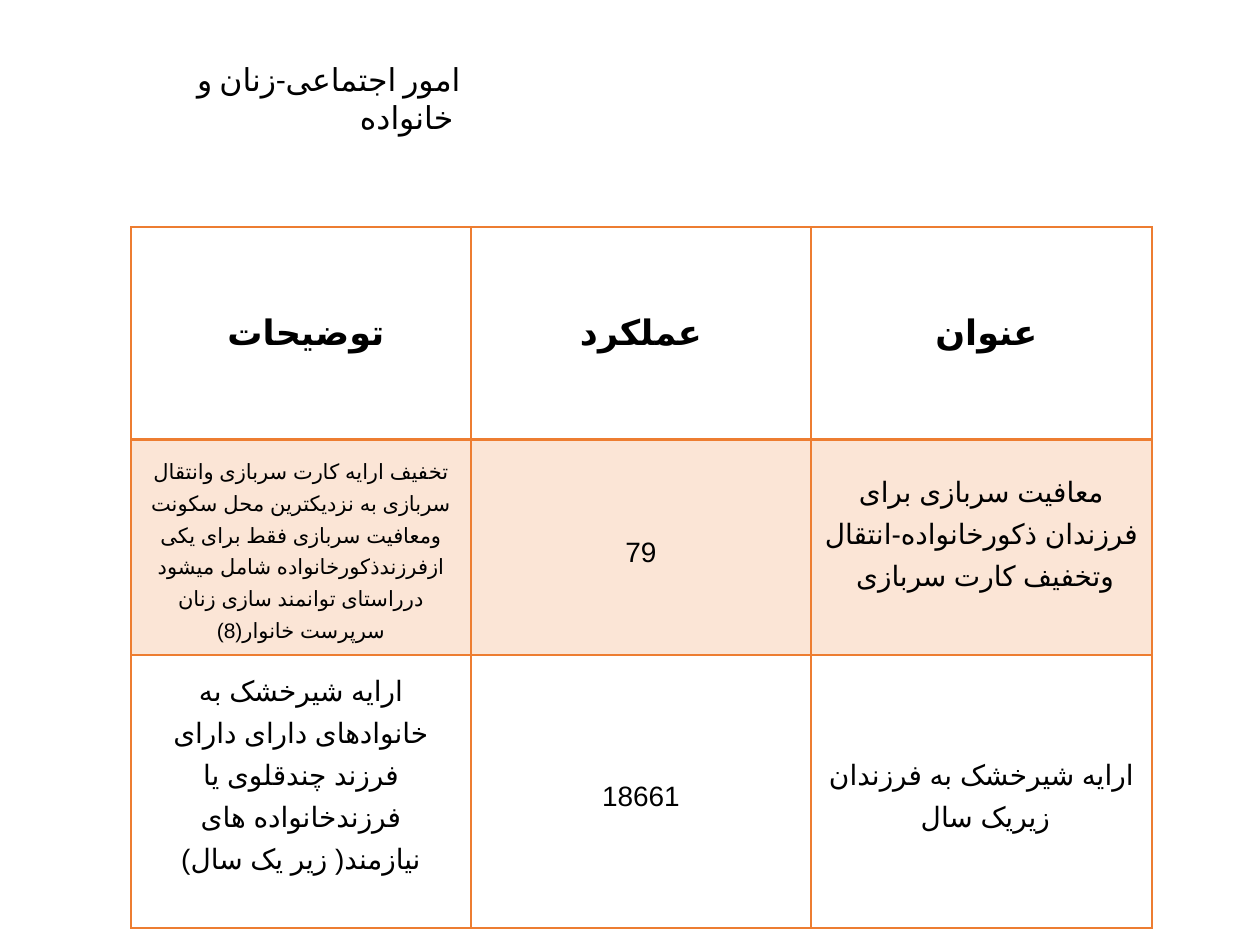
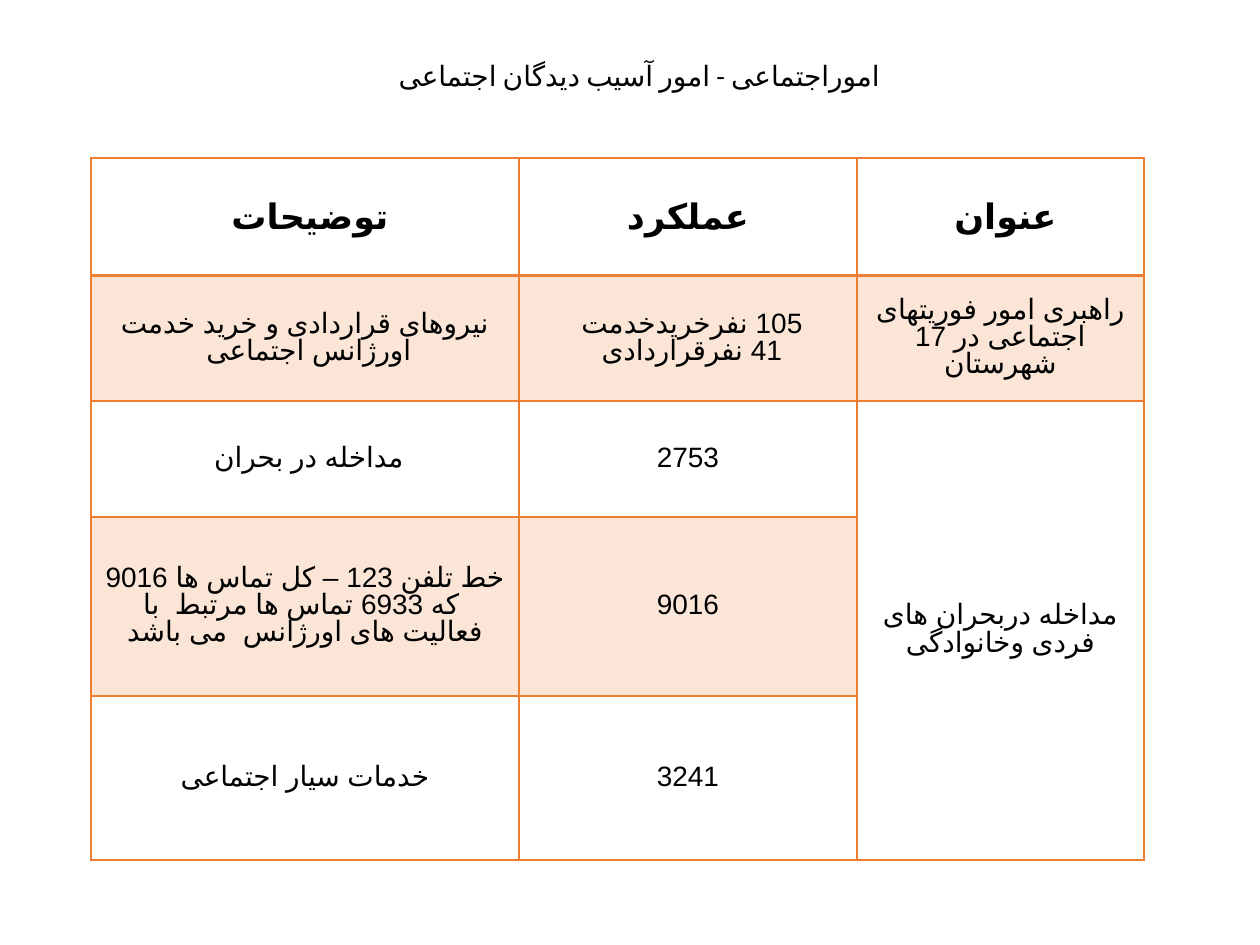
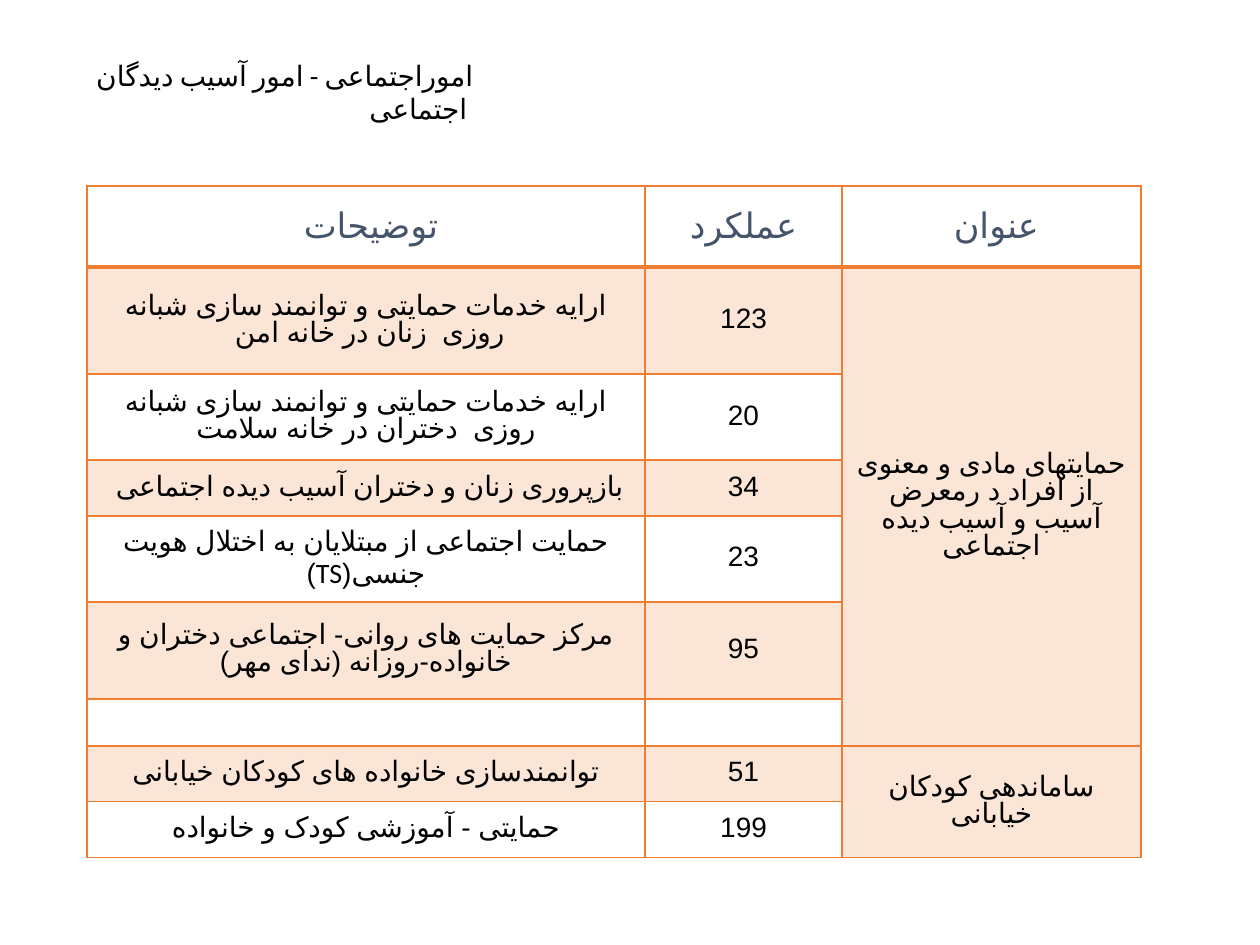
from lxml.etree import SubElement as Sub
from pptx import Presentation
from pptx.dml.color import RGBColor as RGB
from pptx.enum.text import MSO_ANCHOR as Anchor, PP_ALIGN as Align
from pptx.oxml.ns import qn
from pptx.util import Pt

HUES = {"text": "000000", "slate": "44546A", "line": "ED7D31",
        "tint": "FBE5D6", "plain": "FFFFFF"}
HEAD = ["توضیحات ", "عملکرد", "عنوان "]
HARM = "اموراجتماعی - امور آسیب دیدگان اجتماعی "
TIGHT, LOOSE = 0.87, 1.35

# sizes, gaps and pads are exceptions, keyed by (row, column); spans are (column, first, last)
SLIDES = [
    {"title": "امور اجتماعی-زنان و خانواده ", "box": (98, 54, 375, 50), "size": 18,
     "at": (131, 227), "cols": [340, 340, 341], "rows": [213, 215, 273],
     "head": {"bold": True, "hue": "text"}, "gap": LOOSE,
     "sizes": {(1, 0): 12}, "gaps": {}, "pads": {(1, 2): 42, (2, 0): 48},
     "spans": [],
     "cells": [
         ["تخفیف ارایه کارت سربازی وانتقال سربازی به نزدیکترین محل سکونت ومعافیت سربازی "
          "فقط برای یکی ازفرزندذکورخانواده شامل میشود درراستای توانمند سازی زنان "
          "سرپرست خانوار(8)",
          "79",
          "معافیت سربازی برای فرزندان ذکورخانواده-انتقال وتخفیف کارت سربازی "],
         ["ارایه شیرخشک به خانوادهای دارای دارای فرزند چندقلوی یا "
          "فرزندخانواده های نیازمند( زیر یک سال)",
          "18661",
          "ارایه شیرخشک به فرزندان زیریک سال "]]},
    {"title": HARM, "box": (207, 52, 692, 47), "size": 16,
     "at": (91, 158), "cols": [428, 338, 287], "rows": [118, 125, 116, 179, 164],
     "head": {"bold": True, "hue": "text"}, "gap": TIGHT,
     "sizes": {}, "gaps": {}, "pads": {},
     "spans": [(2, 2, 4)],
     "cells": [
         ["نیروهای قراردادی و خرید خدمت اورژانس اجتماعی ",
          "105 نفرخریدخدمت \n41 نفرقراردادی ",
          "راهبری امور فوریتهای اجتماعی در 17 شهرستان"],
         ["مداخله در بحران ", "2753", "مداخله دربحران های فردی وخانوادگی"],
         ["خط تلفن 123 – کل تماس ها 9016\n"
          " که 6933 تماس ها مرتبط  با فعالیت های اورژانس  می باشد", "9016", None],
         ["خدمات سیار اجتماعی", "3241", None]]},
    {"title": HARM, "box": (0, 52, 486, 47), "size": 16,
     "at": (87, 186), "cols": [558, 197, 299],
     "rows": [81, 107, 86, 56, 86, 97, 47, 56, 56],
     "head": {"bold": False, "hue": "slate"}, "gap": TIGHT,
     "sizes": {}, "gaps": {(4, 0): 1.0}, "pads": {},
     "spans": [(2, 1, 6), (2, 7, 8)],
     "cells": [
         ["ارایه خدمات حمایتی و توانمند سازی شبانه روزی  زنان در خانه امن ", "123",
          "حمایتهای مادی و معنوی از افراد د رمعرض آسیب و آسیب دیده اجتماعی"],
         ["ارایه خدمات حمایتی و توانمند سازی شبانه روزی  دختران در خانه سلامت", "20", None],
         ["بازپروری زنان و دختران آسیب دیده اجتماعی ", "34", None],
         ["حمایت اجتماعی از مبتلایان به اختلال هویت جنسی(TS)", "23", None],
         ["مرکز حمایت های روانی- اجتماعی دختران و خانواده-روزانه (ندای مهر)", "95", None],
         ["", "", None],
         ["توانمندسازی خانواده های کودکان خیابانی", "51", "ساماندهی کودکان خیابانی"],
         ["حمایتی - آموزشی کودک و خانواده", "199", None]]},
]


def px(n):
    return round(n * 914400 / 126)


def write(par, text, size, hue="text", bold=False, script="Calibri"):
    """Add one Persian run; script is the font for right-to-left letters and digits."""
    run = par.add_run()
    run.text = text
    for key, val in {"name": "Calibri", "size": Pt(size), "bold": bold}.items():
        setattr(run.font, key, val)
    run.font.color.rgb = RGB.from_string(HUES[hue])
    run.font._element.set("lang", "fa-IR")
    Sub(run.font._element, qn("a:cs"), typeface=script)


def frame(cell, row):
    """Draw the four borders, heavier between header and body."""
    for side in "LRTB":
        wide = 2 if (row, side) in ((0, "B"), (1, "T")) else 1
        line = Sub(cell._tc.get_or_add_tcPr(), qn("a:ln" + side), w=str(Pt(wide)))
        Sub(Sub(line, qn("a:solidFill")), qn("a:srgbClr"), val=HUES["line"])


def fill(cell, text, gap, **look):
    for i, part in enumerate(text.split("\n")):
        par = cell.text_frame.paragraphs[0] if i == 0 else cell.text_frame.add_paragraph()
        par.alignment = Align.CENTER
        par.line_spacing = gap
        par._p.get_or_add_pPr().set("rtl", "1")
        if part:
            write(par, part, script="Arial", **look)
        else:
            Sub(par._p, qn("a:endParaRPr"), sz=str(look["size"] * 100))


def add_grid(slide, data):
    cols, rows = data["cols"], data["rows"]
    spot = [px(n) for n in (*data["at"], sum(cols), sum(rows))]
    grid = slide.shapes.add_table(len(rows), len(cols), *spot).table
    for col, wide in zip(grid.columns, cols):
        col.width = px(wide)
    for row, high in zip(grid.rows, rows):
        row.height = px(high)
    for r, line in enumerate([HEAD] + data["cells"]):
        for c, text in enumerate(line):
            cell, key = grid.cell(r, c), (r, c)
            frame(cell, r)
            cell.fill.solid()
            cell.fill.fore_color.rgb = RGB.from_string(HUES["tint" if r % 2 else "plain"])
            cell.vertical_anchor = Anchor.MIDDLE
            if key in data["pads"]:
                cell.margin_bottom = px(data["pads"][key])
            if r == 0:
                fill(cell, text, 1.0, size=20, **data["head"])
            elif text is not None:
                fill(cell, text, data["gaps"].get(key, data["gap"]),
                     size=data["sizes"].get(key, 16))
    for c, top, end in data["spans"]:
        grid.cell(top, c).merge(grid.cell(end, c))


def add_title(slide, data):
    box = slide.shapes.add_textbox(*[px(n) for n in data["box"]]).text_frame
    box.word_wrap = True
    par = box.paragraphs[0]
    par.alignment = Align.RIGHT
    write(par, data["title"], data["size"])


def main():
    deck = Presentation()
    deck.slide_width, deck.slide_height = px(1260), px(945)
    for data in SLIDES:
        slide = deck.slides.add_slide(deck.slide_layouts[6])
        add_grid(slide, data)
        add_title(slide, data)
    deck.save("out.pptx")


if __name__ == "__main__":
    main()
